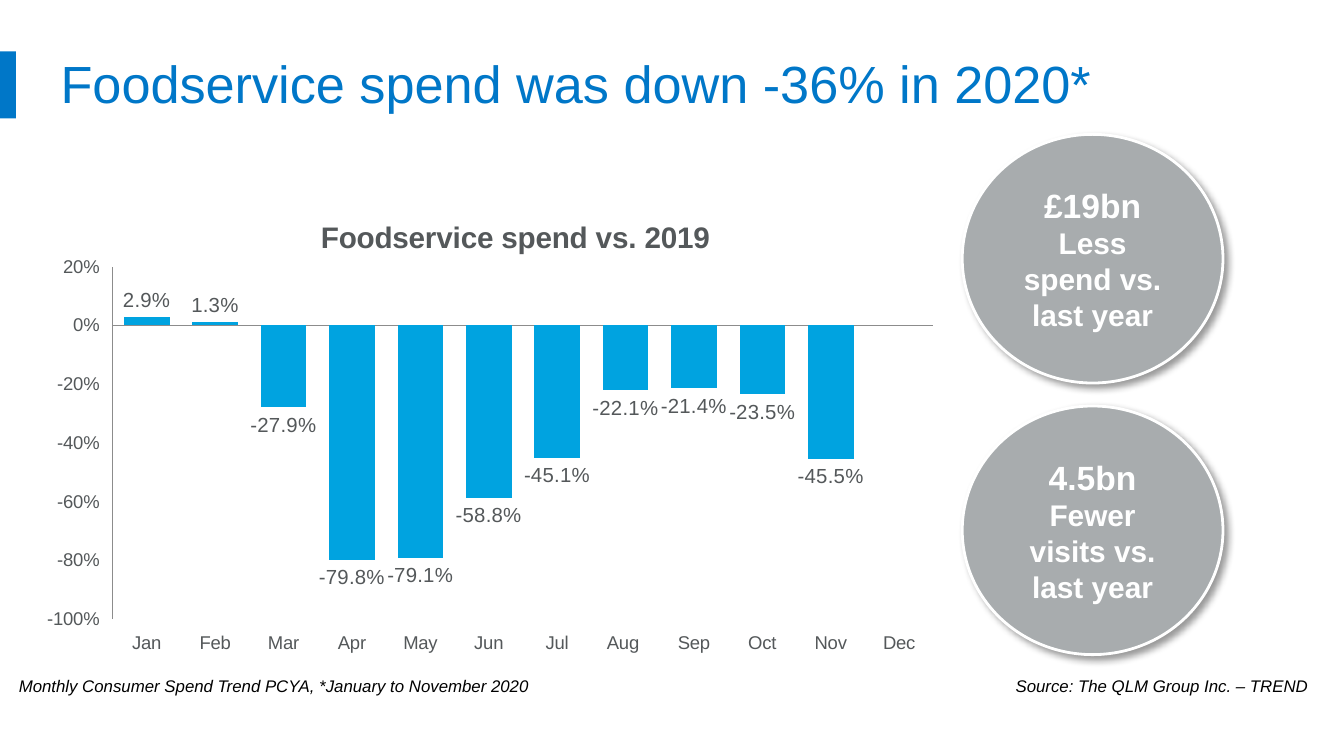
import pptx
import pptx.util
import pptx.chart.data
import pptx.dml.color
import pptx.enum.chart
import pptx.enum.shapes
import pptx.enum.text
import pptx.oxml
import pptx.oxml.ns

Pt = pptx.util.Pt
ALIGN = pptx.enum.text.PP_ALIGN
ANCHOR = pptx.enum.text.MSO_ANCHOR
SHAPE = pptx.enum.shapes.MSO_SHAPE
NS = pptx.oxml.ns.nsdecls("a")
C = {"blue": "0077C8", "bar": "00A3E0", "grey": "A8ACAE", "text": "54585A",
     "axis": "8C8C8C", "white": "FFFFFF", "black": "000000"}


def rgb(name):
    return pptx.dml.color.RGBColor.from_string(C[name])


def style(font, size, color, bold=False, italic=False):
    font.name = "Arial"
    font.size = Pt(size)
    font.bold = bold
    font.italic = italic
    font.color.rgb = rgb(color)


prs = pptx.Presentation()
prs.slide_width, prs.slide_height = Pt(720), Pt(405)
s = prs.slides.add_slide(prs.slide_layouts[6])

sp = s.shapes.add_shape(SHAPE.RECTANGLE, 0, Pt(27.5), Pt(8.6), Pt(36))
sp.shadow.inherit = False
sp.fill.solid()
sp.fill.fore_color.rgb = rgb("blue")
sp.line.fill.background()

sp = s.shapes.add_textbox(Pt(32.5), Pt(26.5), Pt(668), Pt(36))
tf = sp.text_frame
tf.word_wrap = True
tf.vertical_anchor = ANCHOR.MIDDLE
tf.margin_left = tf.margin_right = tf.margin_top = tf.margin_bottom = 0
p = tf.paragraphs[0]
p.text = "Foodservice spend was down -36% in 2020*"
style(p.font, 28, "blue")

cd = pptx.chart.data.CategoryChartData(number_format="0.0%")
cd.categories = ["Jan", "Feb", "Mar", "Apr", "May", "Jun",
                 "Jul", "Aug ", "Sep", "Oct", "Nov", "Dec"]
cd.add_series("Foodservice spend vs. 2019",
              [0.029, 0.013, -0.279, -0.798, -0.791, -0.588,
               -0.451, -0.221, -0.214, -0.235, -0.455, None])
chart = s.shapes.add_chart(pptx.enum.chart.XL_CHART_TYPE.COLUMN_CLUSTERED,
                           Pt(25.2), Pt(106.6), Pt(475.2), Pt(243.4), cd).chart
style(chart.font, 14, "text")
chart.has_legend = False
chart.has_title = True
p = chart.chart_title.text_frame.paragraphs[0]
p.text = "Foodservice spend vs. 2019"
style(p.font, 16, "text", bold=True)
chart.chart_title.include_in_layout = True

layouts = [
    (chart.chart_title._element, 1, "", {"x": 0.3, "y": 0.03}),
    (chart._chartSpace.chart.plotArea, 0, '<c:layoutTarget val="inner"/>',
     {"x": 0.07, "y": 0.15, "w": 0.93, "h": 0.78}),
]
for el, index, target, box in layouts:
    for old in el.findall(pptx.oxml.ns.qn("c:layout")):
        el.remove(old)
    modes = "".join(f'<c:{k}Mode val="edge"/>' for k in "xy")
    sizes = "".join(f'<c:{k} val="{v}"/>' for k, v in box.items())
    el.insert(index, pptx.oxml.parse_xml(
        f'<c:layout {pptx.oxml.ns.nsdecls("c")}><c:manualLayout>'
        f'{target}{modes}{sizes}</c:manualLayout></c:layout>'))

for axis in (chart.category_axis, chart.value_axis):
    axis.has_major_gridlines = False
    axis.major_tick_mark = pptx.enum.chart.XL_TICK_MARK.NONE
    axis.tick_label_position = pptx.enum.chart.XL_TICK_LABEL_POSITION.LOW
    axis.format.line.color.rgb = rgb("axis")
    axis.format.line.width = Pt(0.75)
    style(axis.tick_labels.font, 10, "text")
axis = chart.value_axis
axis.minimum_scale, axis.maximum_scale, axis.major_unit = -1, 0.2, 0.2
axis.tick_labels.number_format = "0%"
axis.tick_labels.number_format_is_linked = False

plot = chart.plots[0]
plot.gap_width = 50
plot.vary_by_categories = False
series = plot.series[0]
series.invert_if_negative = False
series.format.fill.solid()
series.format.fill.fore_color.rgb = rgb("bar")
labels = series.data_labels
labels.show_value = True
labels.number_format = "0.0%"
labels.number_format_is_linked = False
labels.position = pptx.enum.chart.XL_LABEL_POSITION.OUTSIDE_END
style(labels.font, 11, "text")

notes = [
    (388, ALIGN.RIGHT, "Source: The QLM Group Inc. – TREND"),
    (3, ALIGN.LEFT, "Monthly Consumer Spend Trend PCYA, *January to November 2020"),
]
for left, align, text in notes:
    tf = s.shapes.add_textbox(Pt(left), Pt(355.7), Pt(319.7), Pt(20.9)).text_frame
    tf.word_wrap = True
    tf.vertical_anchor = ANCHOR.BOTTOM
    p = tf.paragraphs[0]
    p.text = text
    p.alignment = align
    style(p.font, 9, "black", italic=True)

circles = [
    (72, "£19bn", "Less spend vs. last year"),
    (217.5, "4.5bn", "Fewer visits vs. last year"),
]
for top, figure, caption in circles:
    sp = s.shapes.add_shape(SHAPE.OVAL, Pt(515.5), Pt(top), Pt(139.7), Pt(133.2))
    sp.fill.solid()
    sp.fill.fore_color.rgb = rgb("grey")
    sp.line.color.rgb = rgb("white")
    sp.line.width = Pt(1.5)
    sp._element.spPr.append(pptx.oxml.parse_xml(
        f'<a:effectLst {NS}><a:outerShdw blurRad="{Pt(4)}" dist="{Pt(3)}" '
        f'dir="2700000" algn="tl" rotWithShape="0"><a:srgbClr val="{C["black"]}">'
        '<a:alpha val="40000"/></a:srgbClr></a:outerShdw></a:effectLst>'))
    tf = sp.text_frame
    tf.word_wrap = True
    tf.vertical_anchor = ANCHOR.MIDDLE
    tf.text = f"{figure}\n{caption}"
    for p, size in zip(tf.paragraphs, (18, 16)):
        p.alignment = ALIGN.CENTER
        style(p.font, size, "white", bold=True)

prs.save("out.pptx")
